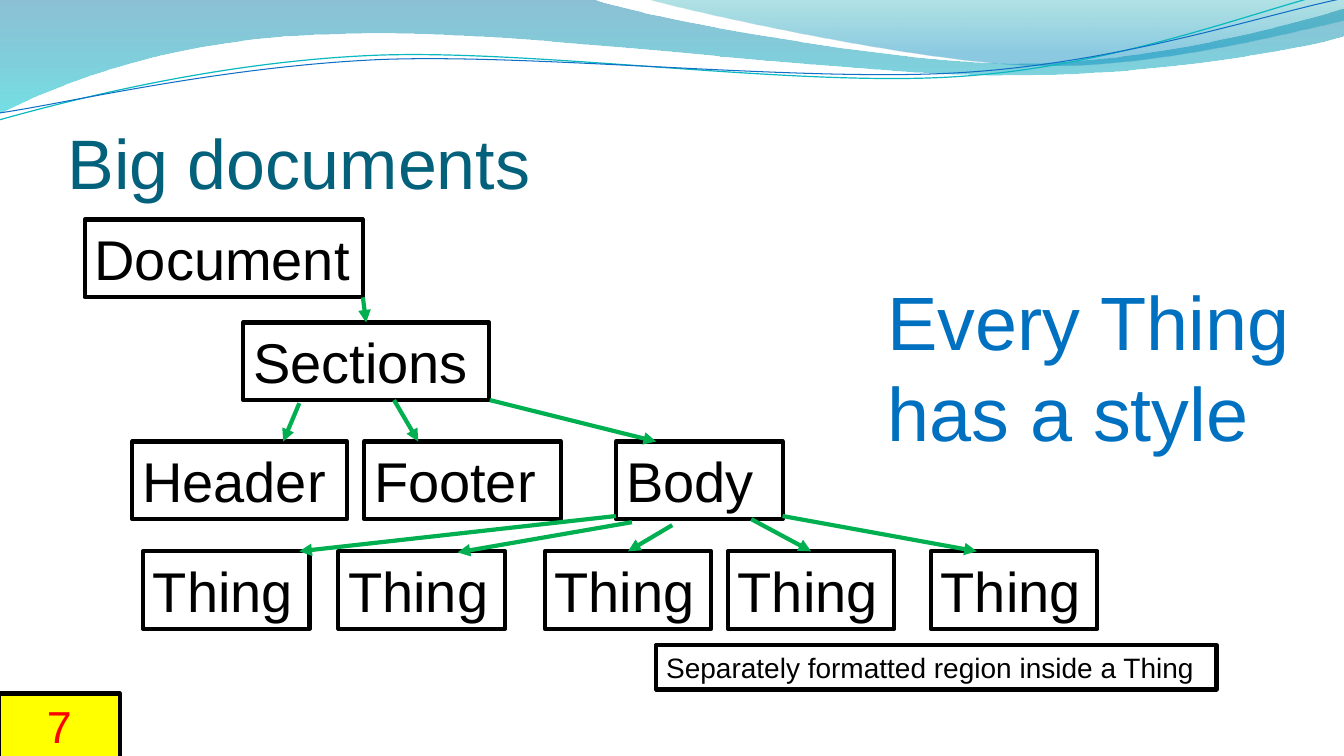
from lxml.etree import SubElement
from pptx import Presentation
from pptx.dml.color import RGBColor
from pptx.enum.shapes import MSO_CONNECTOR, MSO_SHAPE
from pptx.enum.text import MSO_ANCHOR, MSO_AUTO_SIZE, PP_ALIGN
from pptx.oxml.ns import qn
from pptx.util import Pt

BLACK = "000000"
GREEN = "00B050"
BOX_HEIGHT = 55.4
PARTS_TOP = 315.4
THINGS_TOP = 393.8
THING_WIDTH = 119
THING_LEFTS = [102.2, 241.7, 389.1, 519.9, 664.9]

WIDE_WAVE = [
    (0, 0), (422.6, -0.7),
    (456.5, 12.2, 637.2, 45.4, 727.9, 45.4),
    (819.4, 45.4, 920.2, 18.7, 959.8, 6.5),
    (961.2, 25.9),
    (943.9, 31.7, 835.2, 54.7, 715.7, 54),
    (596.9, 54, 366.5, 20.2, 247, 24.5),
    (123.8, 25.9, 43.9, 59.8, -0.7, 81.4),
    (0, 0),
]
RIGHT_WAVE = [
    (460.1, -0.7),
    (488.9, 7.9, 654.5, 44.6, 738, 46.8),
    (821.5, 49.7, 923, 23, 959.8, 15.1),
    (959.8, 0), (460.1, -0.7),
]
CYAN_STRAND = [
    (-0.7, 85.7),
    (46.1, 72.7, 151.9, 44.6, 265.7, 39.6),
    (379.4, 34.6, 568.8, 62.6, 684, 54.7),
    (799.2, 47.5, 901.4, 5.8, 958.3, -7.2),
]
BLUE_STRAND = [
    (0, 80.6),
    (45.4, 74.2, 157, 47.5, 272.2, 42.5),
    (386.6, 38.2, 573.1, 59, 687.6, 51.8),
    (802.8, 44.6, 903.6, 10.1, 960.5, -1.4),
]


def color(hex_value):
    return RGBColor.from_string(hex_value)


def apply(target, values):
    for name, value in values.items():
        setattr(target, name, value)


def bend(outline, segments):
    straight = list(outline.element.spPr.iter(qn("a:lnTo")))
    for line, segment in zip(straight, segments):
        if len(segment) == 2:
            continue
        line.tag = qn("a:cubicBezTo")
        handles = [segment[:2], segment[2:4]]
        for index, (x, y) in enumerate(handles):
            handle = SubElement(line, qn("a:pt"), x=str(Pt(x) - outline.left),
                                y=str(Pt(y) - outline.top))
            line.insert(index, handle)


def add_outline(slide, segments, close):
    start, *rest = segments
    builder = slide.shapes.build_freeform(Pt(start[0]), Pt(start[1]))
    ends = [(Pt(segment[-2]), Pt(segment[-1])) for segment in rest]
    builder.add_line_segments(ends, close=close)
    outline = builder.convert_to_shape()
    outline.shadow.inherit = False
    bend(outline, rest)
    return outline


def add_wave(slide, segments, stops):
    wave = add_outline(slide, segments, True)
    wave.line.fill.background()
    wave.fill.gradient()
    wave.fill.gradient_angle = 270
    for stop, (position, hex_value, _) in zip(wave.fill.gradient_stops, stops):
        stop.position = position
        stop.color.rgb = color(hex_value)
    gradient_colors = list(wave.element.spPr.iter(qn("a:srgbClr")))
    for gradient_color, (_, _, opacity) in zip(gradient_colors, stops):
        SubElement(gradient_color, qn("a:alpha"), val=str(opacity * 1000))


def add_strand(slide, segments, hex_value, width):
    strand = add_outline(slide, segments, False)
    strand.fill.background()
    strand.line.color.rgb = color(hex_value)
    strand.line.width = Pt(width)


def write(shape, words, size, hex_value, align=PP_ALIGN.LEFT, **frame_values):
    frame = shape.text_frame
    apply(frame, {"text": words, "word_wrap": True, **frame_values})
    paragraph = frame.paragraphs[0]
    paragraph.alignment = align
    font = paragraph.runs[0].font
    apply(font, {"name": "Arial", "size": Pt(size)})
    font.color.rgb = color(hex_value)


def add_box(slide, words, left, top, width, height=BOX_HEIGHT, size=40,
            hex_value=BLACK, fill=None, align=PP_ALIGN.LEFT):
    box = slide.shapes.add_shape(
        MSO_SHAPE.RECTANGLE, Pt(left), Pt(top), Pt(width), Pt(height))
    box.shadow.inherit = False
    if fill:
        box.fill.solid()
        box.fill.fore_color.rgb = color(fill)
    else:
        box.fill.background()
    box.line.color.rgb = color(BLACK)
    box.line.width = Pt(3)
    write(box, words, size, hex_value, align, vertical_anchor=MSO_ANCHOR.TOP,
          auto_size=MSO_AUTO_SIZE.SHAPE_TO_FIT_TEXT)
    return box


def add_arrow(slide, begin, end, joined=None):
    arrow = slide.shapes.add_connector(
        MSO_CONNECTOR.STRAIGHT, *(Pt(length) for length in begin + end))
    arrow.line.color.rgb = color(GREEN)
    arrow.line.width = Pt(3)
    if joined is not None:
        arrow.end_connect(joined, 0)
    properties = arrow.element.spPr
    SubElement(properties.find(qn("a:ln")), qn("a:tailEnd"), type="triangle")
    SubElement(properties, qn("a:effectLst"))


def add_title(slide):
    title = slide.shapes.title
    apply(title, {"left": Pt(48.2), "top": Pt(55.4),
                  "width": Pt(871.9), "height": Pt(90)})
    write(title, "Big documents", 50, "04617B", vertical_anchor=MSO_ANCHOR.BOTTOM,
          margin_left=0, margin_right=0, margin_bottom=0, margin_top=Pt(3.6),
          auto_size=MSO_AUTO_SIZE.NONE)


def add_remark(slide):
    remark = slide.shapes.add_textbox(Pt(626.7), Pt(193), Pt(304.6), Pt(138.2))
    write(remark, "Every Thing has a style", 54, "0070C0",
          auto_size=MSO_AUTO_SIZE.SHAPE_TO_FIT_TEXT)


def add_tree(slide):
    add_box(slide, "Document", 60.5, 156.8, 198.7)
    sections = add_box(slide, "Sections", 173.7, 230.4, 175.7)
    for words, left, width in [("Header", 94.5, 153.4), ("Footer", 260.1, 140.6),
                               ("Body", 440.1, THING_WIDTH)]:
        add_box(slide, words, left, PARTS_TOP, width)
    things = [add_box(slide, "Thing", left, THINGS_TOP, THING_WIDTH)
              for left in THING_LEFTS]
    for begin, end, joined in [
        ((259.2, 212.4), (261.4, 230.4), sections),
        ((213.8, 288), (202.3, PARTS_TOP), None),
        ((281.5, 285.8), (298.8, PARTS_TOP), None),
        ((349.9, 285.8), (468.7, PARTS_TOP), None),
        ((439.9, 368.6), (213.8, THINGS_TOP), None),
        ((451.4, 373), (326.9, 394.6), None),
        ((480.2, 375.1), (448.6, THINGS_TOP), things[2]),
        ((536.6, 370.8), (579.4, THINGS_TOP), things[3]),
        ((559, 368.6), (697.7, THINGS_TOP), None),
    ]:
        add_arrow(slide, begin, end, joined)
    add_box(slide, "Separately formatted region inside a Thing",
            468.7, 460.8, 400.3, 31.7, size=20)


def main():
    deck = Presentation()
    apply(deck, {"slide_width": Pt(960), "slide_height": Pt(540)})
    slide = deck.slides.add_slide(deck.slide_layouts[5])
    add_wave(slide, WIDE_WAVE, [(0, "0074A1", 45), (1, "00C6CF", 55)])
    add_wave(slide, RIGHT_WAVE, [(0, "00A1A9", 30), (0.8, "008BBF", 45)])
    add_strand(slide, CYAN_STRAND, "0AB8BF", 0.85)
    add_strand(slide, BLUE_STRAND, "0F6FC6", 0.75)
    add_title(slide)
    add_tree(slide)
    add_remark(slide)
    add_box(slide, "7", -0.7, 495.4, 86.4, 46.1, size=32, hex_value="FF0000",
            fill="FFFF00", align=PP_ALIGN.CENTER)
    deck.save("out.pptx")


if __name__ == "__main__":
    main()
